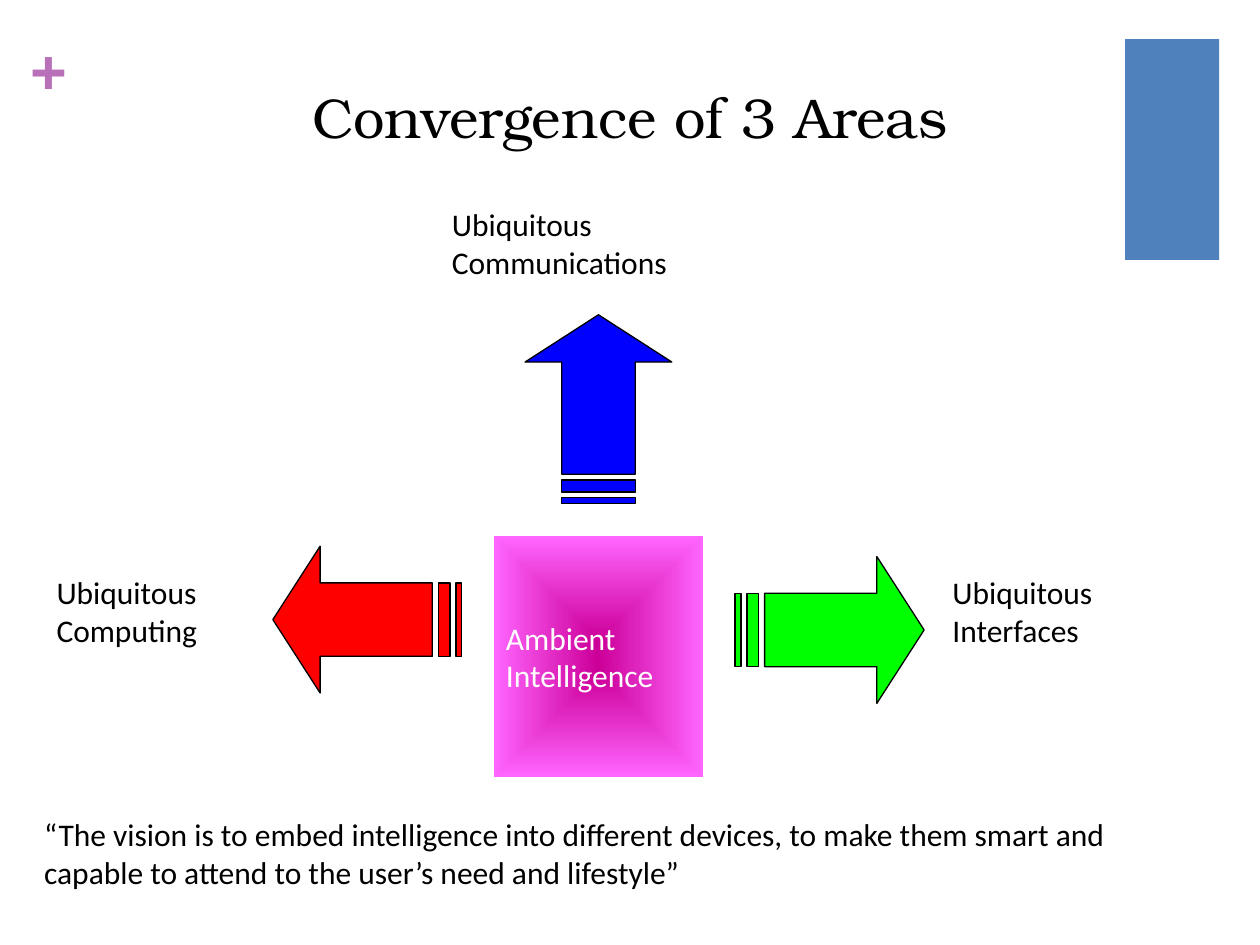
from lxml.etree import SubElement
from pptx import Presentation
from pptx.dml.color import RGBColor
from pptx.enum.shapes import MSO_SHAPE
from pptx.enum.text import MSO_ANCHOR, PP_ALIGN
from pptx.oxml.ns import qn
from pptx.util import Cm, Pt


def rgb(value):
    return RGBColor.from_string(value)


def write(shape, text, size=18, font="Calibri", color="000000", bold=False,
          align=PP_ALIGN.LEFT, anchor=MSO_ANCHOR.TOP, wrap=False, inset=None):
    frame = shape.text_frame
    frame.word_wrap = wrap
    frame.vertical_anchor = anchor
    if inset is not None:
        frame.margin_left = frame.margin_right = inset
        frame.margin_top = frame.margin_bottom = inset
    frame.text = text
    for paragraph in frame.paragraphs:
        paragraph.alignment = align
        paragraph.font.size = Pt(size)
        paragraph.font.name = font
        paragraph.font.bold = bold
        paragraph.font.color.rgb = rgb(color)


deck = Presentation()
deck.slide_width, deck.slide_height = Cm(25.4), Cm(19.05)
slide = deck.slides.add_slide(deck.slide_layouts[6])
shapes = slide.shapes

corner_band = shapes.add_shape(MSO_SHAPE.RECTANGLE, Cm(22.68), Cm(0.79), Cm(1.9), Cm(4.45))
corner_band.shadow.inherit = False
corner_band.fill.solid()
corner_band.fill.fore_color.rgb = rgb("4F81BD")
corner_band.line.fill.background()

plus_sign = shapes.add_textbox(Cm(0.61), Cm(0.64), Cm(0.71), Cm(1.55))
write(plus_sign, "+", size=36, font="Arial", color="B870B8", bold=True, inset=0)

title = shapes.add_textbox(Cm(1.27), Cm(0.76), Cm(22.86), Cm(3.18))
write(title, "Convergence of 3 Areas", size=32, font="TeX Gyre Bonum",
      align=PP_ALIGN.CENTER, anchor=MSO_ANCHOR.MIDDLE, wrap=True)

arrow_length, arrow_breadth = Cm(3.81), Cm(2.96)
arrow_head = [(24, 0), (24, 1), (5, 1), (5, 3), (24, 3), (24, 4), (32, 2)]
stripes = [[(left, 1), (left, 3), (right, 3), (right, 1)] for left, right in [(2, 4), (0, 1)]]
for left, top, angle, color in [
    (14.82, 11.22, 0, "00FF00"),
    (5.5, 11.01, 180, "FF0000"),
    (10.16, 6.77, 270, "0000FF"),
]:
    outline = shapes.build_freeform(*arrow_head[0], scale=(arrow_length / 32, arrow_breadth / 4))
    outline.add_line_segments(arrow_head[1:])
    for stripe in stripes:
        outline.move_to(*stripe[0])
        outline.add_line_segments(stripe[1:])
    arrow = outline.convert_to_shape(Cm(left), Cm(top))
    arrow.rotation = angle
    arrow.shadow.inherit = False
    arrow.fill.solid()
    arrow.fill.fore_color.rgb = rgb(color)
    arrow.line.color.rgb = rgb("000000")
    arrow.line.width = Pt(0.75)

core = shapes.add_shape(MSO_SHAPE.RECTANGLE, Cm(9.95), Cm(10.8), Cm(4.23), Cm(4.87))
core.shadow.inherit = False
core.line.fill.background()
core.fill.gradient()
for stop, position, color in zip(core.fill.gradient_stops, (0, 1), ("CC0099", "FF66FF")):
    stop.position = position
    stop.color.rgb = rgb(color)
gradient = core.fill._xPr.find(qn("a:gradFill"))
gradient.remove(gradient.find(qn("a:lin")))
spread = SubElement(gradient, qn("a:path"), {"path": "rect"})
SubElement(spread, qn("a:fillToRect"), {side: "50000" for side in "ltrb"})
write(core, "Ambient\nIntelligence", color="FFFFFF", anchor=MSO_ANCHOR.MIDDLE)

for left, top, width, area in [
    (18.95, 11.43, 4.06, "Interfaces"),
    (0.89, 11.43, 4.19, "Computing"),
    (8.86, 4.01, 6.05, "Communications"),
]:
    area_label = shapes.add_textbox(Cm(left), Cm(top), Cm(width), Cm(1.96))
    write(area_label, f"Ubiquitous\n{area}")

vision = shapes.add_textbox(Cm(0.64), Cm(16.31), Cm(23.29), Cm(1.78))
write(vision, "“The vision is to embed intelligence into different devices, to make them smart and "
      "capable to attend to the user’s need and lifestyle”", wrap=True)

deck.save("out.pptx")
